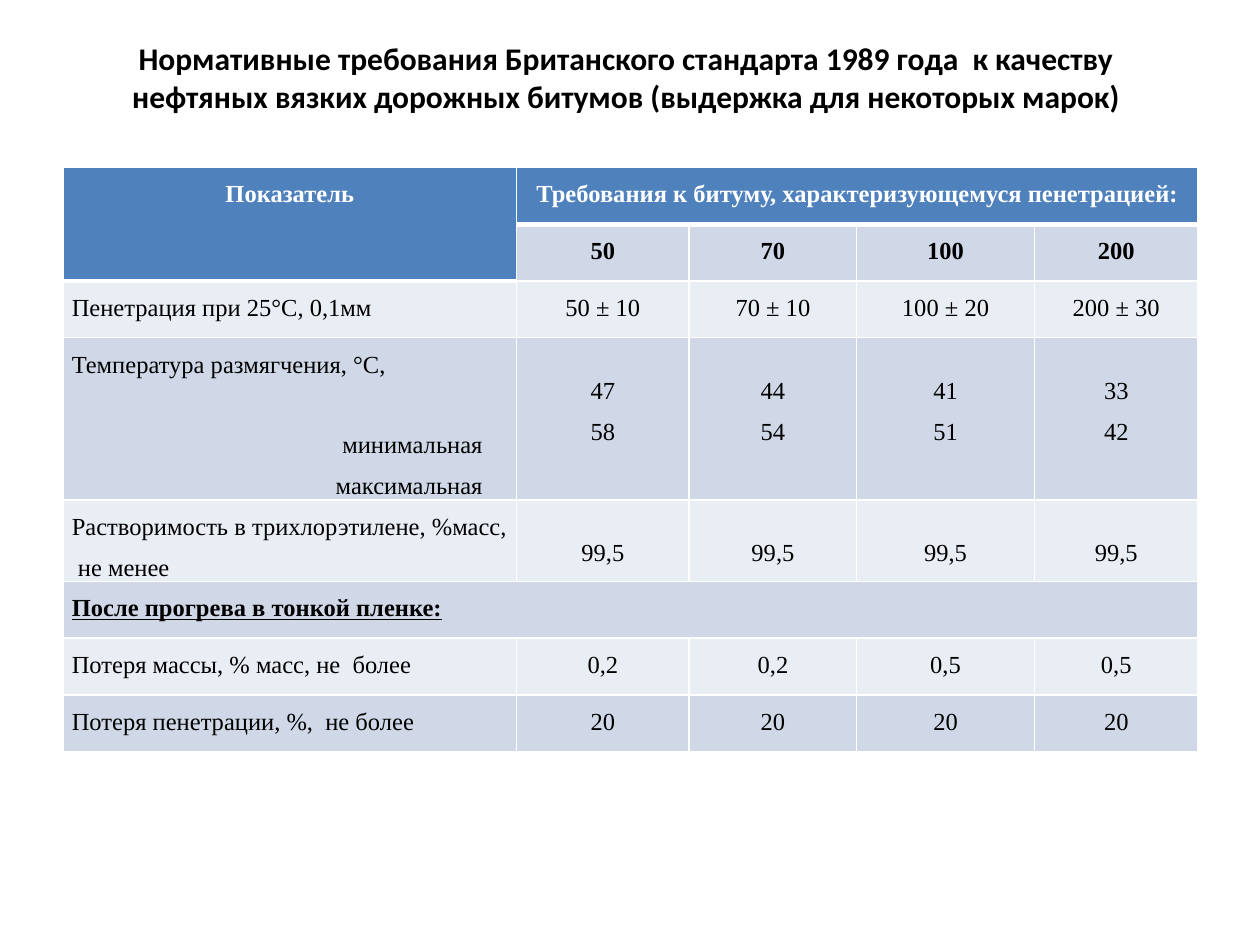
"""Build a slide with a table of British standard requirements for road bitumens."""
from lxml import etree
from pptx import Presentation
from pptx.dml.color import RGBColor
from pptx.enum.text import MSO_ANCHOR, PP_ALIGN
from pptx.oxml.ns import qn
from pptx.util import Inches, Pt

LEFT, CENTER, RIGHT = PP_ALIGN.LEFT, PP_ALIGN.CENTER, PP_ALIGN.RIGHT
TOP = MSO_ANCHOR.TOP
HEADER, BANDS = "4F81BD", ("E9EDF4", "D0D8E8")
WHITE, BLACK = "FFFFFF", "000000"
COLUMNS = (3.6, 1.37, 1.33, 1.41, 1.3)
ROW = 0.45
ROWS = (ROW, ROW, ROW, 1.29, 0.64, ROW, ROW, ROW)
SOFTENING, SOLUBILITY, HEATED = 3, 4, 5
CONTENT = (
    ("Показатель", "Требования к битуму, характеризующемуся пенетрацией:", "", "", ""),
    ("", "50", "70", "100", "200"),
    ("Пенетрация при 25°С, 0,1мм", "50 ± 10", "70 ± 10", "100 ± 20", "200 ± 30"),
    ("Температура размягчения, °С,\nминимальная\nмаксимальная",
     "47\n58", "44\n54", "41\n51", "33\n42"),
    ("Растворимость в трихлорэтилене, %масс,  не менее",) + ("99,5",) * 4,
    ("После прогрева в тонкой пленке:", "", "", "", ""),
    ("Потеря массы, % масс, не  более", "0,2", "0,2", "0,5", "0,5"),
    ("Потеря пенетрации, %,  не более",) + ("20",) * 4,
)


def add_run(paragraph, text, font, size, color, bold):
    run = paragraph.add_run()
    run.text = text
    run.font.name, run.font.size, run.font.bold = font, Pt(size), bold
    run.font.color.rgb = RGBColor.from_string(color)
    return run


def set_borders(cell, top, bottom):
    properties = cell._tc.get_or_add_tcPr()
    sides = (("a:lnL", 1), ("a:lnR", 1), ("a:lnT", top), ("a:lnB", bottom))
    for position, (side, width) in enumerate(sides):
        line = etree.Element(qn(side), w=str(Pt(width)))
        fill = etree.SubElement(line, qn("a:solidFill"))
        etree.SubElement(fill, qn("a:srgbClr"), val=WHITE)
        properties.insert(position, line)


prs = Presentation()
prs.slide_width, prs.slide_height = Inches(10), Inches(7.5)
slide = prs.slides.add_slide(prs.slide_layouts[5])

title = slide.shapes.title
title.left, title.top = Inches(0.47), Inches(0.31)
title.width, title.height = Inches(9), Inches(0.87)
heading = title.text_frame
heading.word_wrap, heading.vertical_anchor, heading.margin_top = True, TOP, 0
heading.paragraphs[0].alignment = CENTER
add_run(heading.paragraphs[0],
        "Нормативные требования Британского стандарта 1989 года  к качеству "
        "нефтяных вязких дорожных битумов (выдержка для некоторых марок)",
        "Calibri", 18, BLACK, True)

requirements = slide.shapes.add_table(
    len(ROWS), len(COLUMNS), Inches(0.5), Inches(1.33),
    Inches(sum(COLUMNS)), Inches(sum(ROWS))).table
for column, width in zip(requirements.columns, COLUMNS):
    column.width = Inches(width)
for row, height in zip(requirements.rows, ROWS):
    row.height = Inches(height)
requirements.cell(0, 0).merge(requirements.cell(1, 0))
requirements.cell(0, 1).merge(requirements.cell(0, 4))
requirements.cell(HEATED, 0).merge(requirements.cell(HEATED, 4))

for r, entries in enumerate(CONTENT):
    for c, entry in enumerate(entries):
        cell = requirements.cell(r, c)
        header_depth = 2 if c == 0 else 1
        is_header = r < header_depth
        cell.fill.solid()
        cell.fill.fore_color.rgb = RGBColor.from_string(HEADER if is_header else BANDS[r % 2])
        set_borders(cell, 3 if r == header_depth else 1, 3 if is_header else 1)
        cell.vertical_anchor = TOP
        cell.margin_left = cell.margin_right = Inches(0.07)
        cell.margin_top = cell.margin_bottom = 0
        if c and r in (SOFTENING, SOLUBILITY):
            cell.margin_top = Inches(0.21)
        if c == 0 and r == SOFTENING:
            cell.margin_right = Inches(0.27)
        if not entry:
            continue
        for number, text in enumerate(entry.split("\n")):
            frame = cell.text_frame
            paragraph = frame.add_paragraph() if number else frame.paragraphs[0]
            paragraph.line_spacing = 1.5
            paragraph.alignment = CENTER if c or is_header else RIGHT if number else LEFT
            if c == 0 and number == 1:
                paragraph.space_before = Pt(23)
            run = add_run(paragraph, text, "Times New Roman", 14,
                          WHITE if is_header else BLACK, r < 2 or r == HEATED)
            if r == HEATED:
                run.font.underline = True

prs.save("out.pptx")
